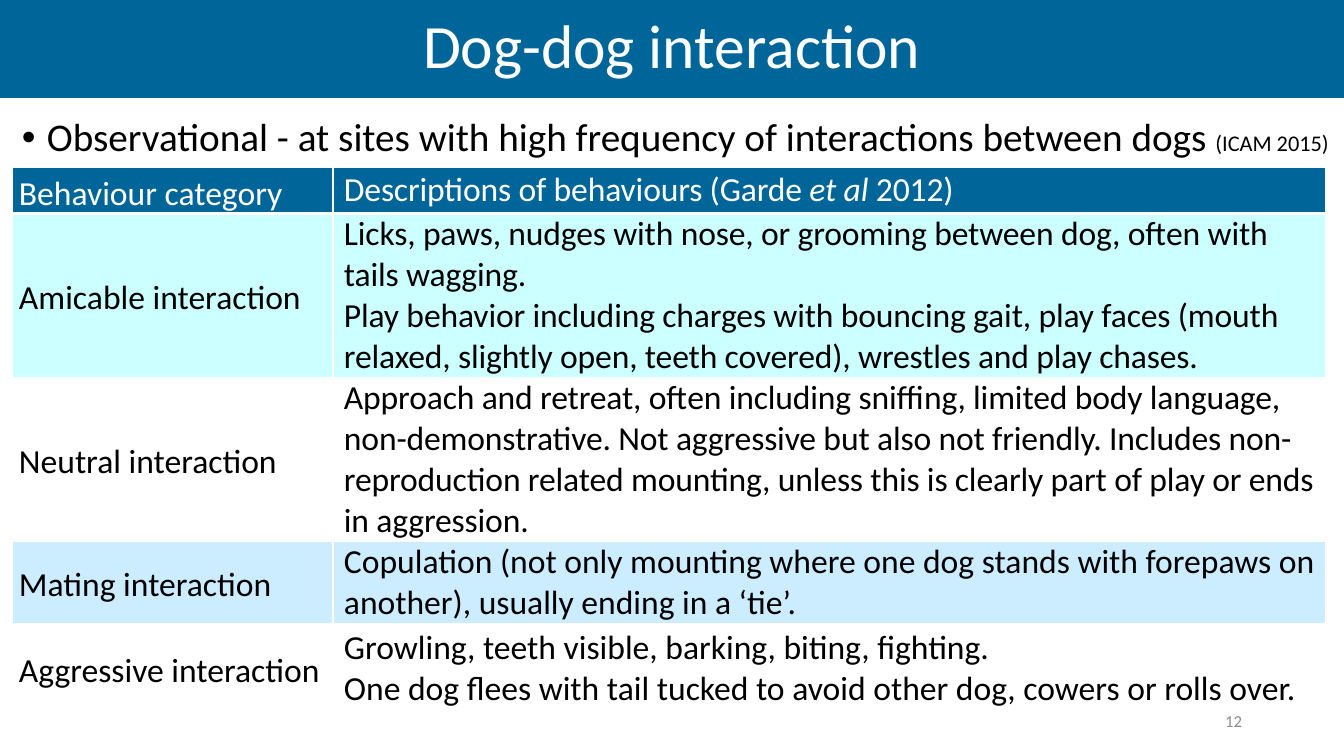
from pptx import Presentation, util as u
from pptx.dml.color import RGBColor
from pptx.enum import text as t
from pptx.oxml import parse_xml
from pptx.oxml.ns import nsdecls

# Content
TITLE = "Dog-dog interaction"
METHOD = "Observational - at sites with high frequency of interactions between dogs "
SOURCE = "(ICAM 2015)"
PAGE = "12"
# category, paragraphs of description, fill, row height in px, letter spacing
BEHAVIOURS = [
    ("Behaviour category",
     [["Descriptions of behaviours (Garde ", "et al ", "2012)"]], "006699", 46, -10),
    ("Amicable interaction",
     [["Licks, paws, nudges with nose, or grooming between dog, often with tails wagging."],
      ["Play behavior including charges with bouncing gait, play faces (mouth relaxed, "
       "slightly open, teeth covered), wrestles and play chases."]], "CCFFFF", 164, -10),
    ("Neutral interaction",
     [["Approach and retreat, often including sniffing, limited body language, "
       "non-demonstrative. Not aggressive but also not friendly. Includes non-reproduction "
       "related mounting, unless this is clearly part of play or ends in aggression."]],
     "FFFFFF", 164, -10),
    ("Mating interaction",
     [["Copulation (not only mounting where one dog stands with forepaws on another), "
       "usually ending in a ‘tie’."]], "CCECFF", 82, 0),
    ("Aggressive interaction",
     [["Growling, teeth visible, barking, biting, fighting."],
      ["One dog flees with tail tucked to avoid other dog, cowers or rolls over."]],
     "FFFFFF", 90, 0),
]
COLUMNS = (321, 993)


class Theme:
    font = "Calibri"
    blue, white, black, grey = "006699", "FFFFFF", "000000", "8C8C8C"
    title, bullet, table, source, page = 44, 28, 24, 16, 12


def px(n):
    return u.Emu(round(n * 914400 / 100.8))


def box(*lengths):
    return [px(n) for n in lengths]


def add_run(paragraph, words, size, color, italic=None, spacing=0):
    run = paragraph.add_run()
    run.text = words
    run.font.name, run.font.size = Theme.font, u.Pt(size)
    run.font.color.rgb = RGBColor.from_string(color)
    run.font.italic = italic
    if spacing:
        run._r.get_or_add_rPr().set("spc", str(spacing))


def indent(paragraph, left, first=0):
    properties = paragraph._p.get_or_add_pPr()
    properties.set("marL", str(px(left)))
    properties.set("indent", str(px(first)))
    return properties


def style_cell(cell, fill, is_header):
    cell.vertical_anchor = t.MSO_ANCHOR.MIDDLE
    cell.margin_left = cell.margin_right = px(7)
    cell.margin_top = cell.margin_bottom = 0
    for side in "LRTB":
        points = 3 if is_header and side == "B" else 1
        cell._tc.get_or_add_tcPr().append(parse_xml(
            f'<a:ln{side} {nsdecls("a")} w="{u.Pt(points)}"><a:solidFill>'
            f'<a:srgbClr val="{Theme.white}"/></a:solidFill></a:ln{side}>'))
    cell.fill.solid()
    cell.fill.fore_color.rgb = RGBColor.from_string(fill)


deck = Presentation()
deck.slide_width, deck.slide_height = box(1344, 756)
slide = deck.slides.add_slide(deck.slide_layouts[5])

# Title band
title = slide.shapes.title
title.left, title.top, title.width, title.height = box(0, 0, 1344, 98)
title.fill.solid()
title.fill.fore_color.rgb = RGBColor.from_string(Theme.blue)
title.text_frame.vertical_anchor = t.MSO_ANCHOR.MIDDLE
heading = title.text_frame.paragraphs[0]
heading.alignment, heading.line_spacing = t.PP_ALIGN.CENTER, 0.9
add_run(heading, TITLE, Theme.title, Theme.white)

# Bulleted method
method = slide.shapes.add_textbox(*box(12, 113, 1332, 50)).text_frame
method.word_wrap = True
bullet = method.paragraphs[0]
bullet.line_spacing, bullet.space_before = 0.9, u.Pt(10)
properties = indent(bullet, 25, -25)
properties.append(parse_xml(f'<a:buFont {nsdecls("a")} typeface="Arial"/>'))
properties.append(parse_xml(f'<a:buChar {nsdecls("a")} char="•"/>'))
add_run(bullet, METHOD, Theme.bullet, Theme.black)
add_run(bullet, SOURCE, Theme.source, Theme.black)

# Behaviour table
heights = [row[3] for row in BEHAVIOURS]
table = slide.shapes.add_table(len(BEHAVIOURS), len(COLUMNS),
                               *box(12, 167, sum(COLUMNS), sum(heights))).table
table.horz_banding = False
for column, width in zip(table.columns, COLUMNS):
    column.width = px(width)
for i, (category, description, fill, height, spacing) in enumerate(BEHAVIOURS):
    table.rows[i].height = px(height)
    color = Theme.black if i else Theme.white
    name_cell, description_cell = table.rows[i].cells
    for cell in (name_cell, description_cell):
        style_cell(cell, fill, i == 0)
    name = name_cell.text_frame.paragraphs[0]
    name.line_spacing = 1.15
    name.space_before = name.space_after = u.Pt(10)
    add_run(name, category, Theme.table, color, False)
    frame = description_cell.text_frame
    for j, pieces in enumerate(description):
        paragraph = frame.add_paragraph() if j else frame.paragraphs[0]
        indent(paragraph, 4)
        for words in pieces:
            add_run(paragraph, words, Theme.table, color, words == "et al ", spacing)
    for paragraph in [name, *frame.paragraphs]:
        for run in paragraph.runs:
            run.font.bold = False

# Page number
page = slide.shapes.add_textbox(*box(950, 701, 302, 40)).text_frame
page.word_wrap = True
page.vertical_anchor = t.MSO_ANCHOR.MIDDLE
page.paragraphs[0].alignment = t.PP_ALIGN.RIGHT
add_run(page.paragraphs[0], PAGE, Theme.page, Theme.grey)

deck.save("out.pptx")
